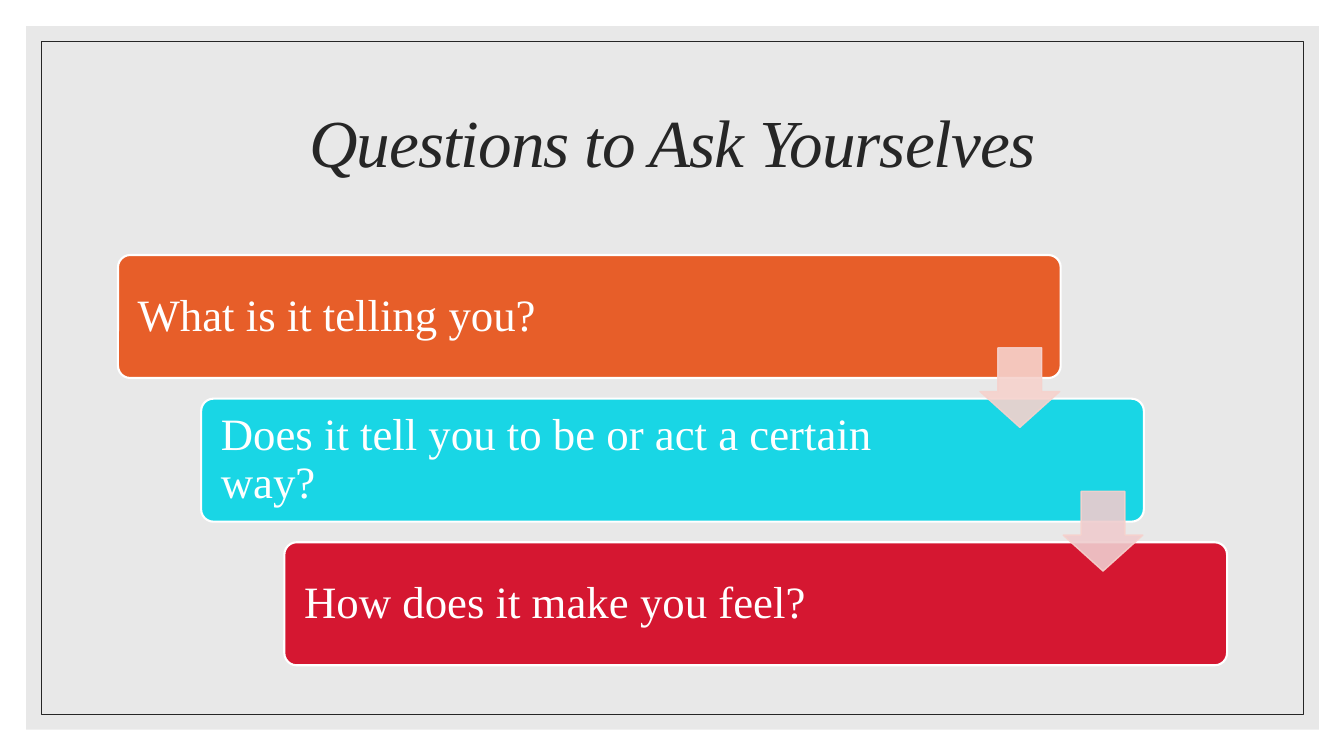
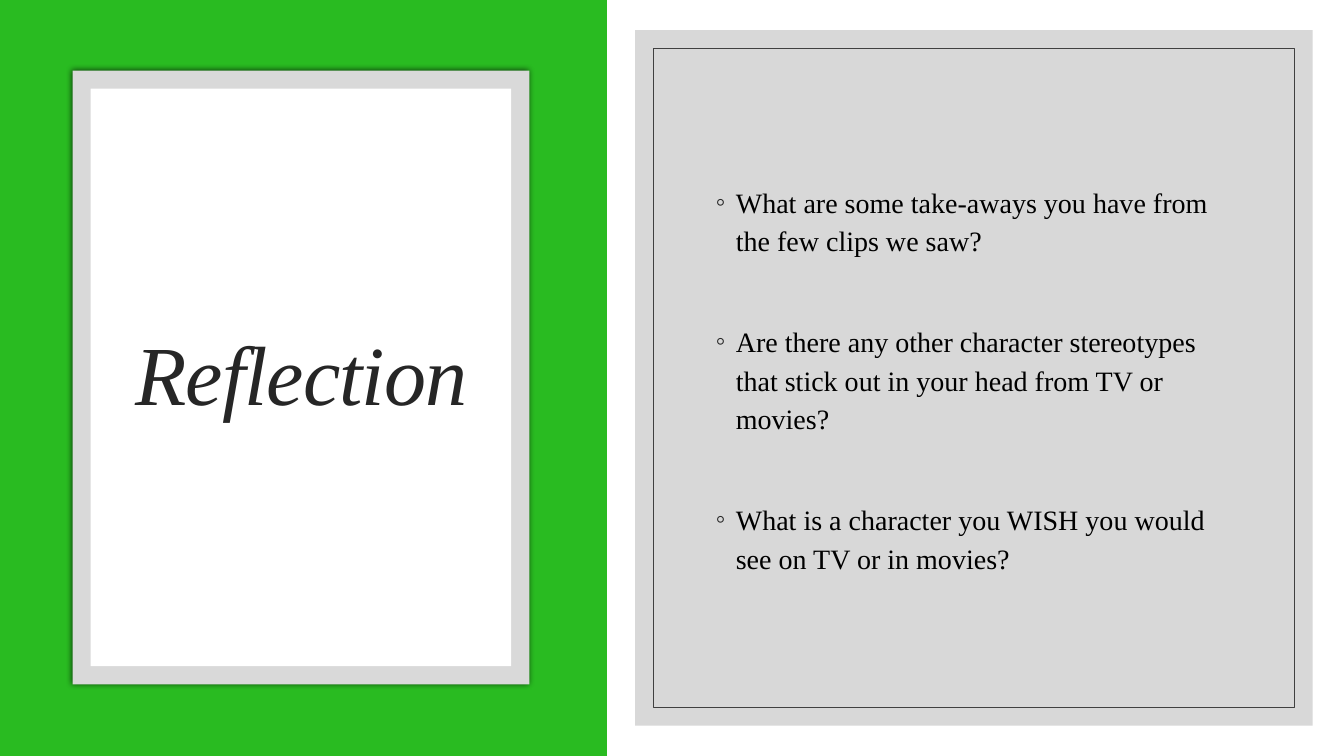
from lxml import etree
from pptx import Presentation
from pptx.dml.color import RGBColor
from pptx.enum import shapes, text
from pptx.oxml import ns
from pptx.util import Inches, Pt

FONT = "Times New Roman"
WHITE, BLACK, INK, GREY = "FFFFFF", "000000", "262626", "D9D9D9"
GREEN = "29BB21"
KIND = shapes.MSO_SHAPE

STEPS = [
    ("What is it telling you?", "E75E29"),
    ("Does it tell you to be or act a certain way?", "19D6E5"),
    ("How does it make you feel?", "D51731"),
]
ARROW_FILLS = ["F6D2CD", "EFCCCE"]
ARROW_LINE = "F6D2CD"
QUESTIONS = [
    "What are some take-aways you have from the few clips we saw?",
    "Are there any other character stereotypes that stick out in your head from TV or movies?",
    "What is a character you WISH you would see on TV or in movies?",
]


def child(parent, tag, **attributes):
    return etree.SubElement(parent, ns.qn(tag), attributes)


def paint(target, color, opacity=100):
    target.solid()
    target.fore_color.rgb = RGBColor.from_string(color)
    if opacity < 100:
        for node in target._xPr.iter(ns.qn("a:solidFill")):
            if node.getparent() is target._xPr:
                child(node[0], "a:alpha", val=str(opacity * 1000))


def add_box(page, kind, place, fill=None, line=None, width=1, opacity=100):
    box = page.shapes.add_shape(kind, *map(Inches, place))
    box.shadow.inherit = False
    if fill:
        paint(box.fill, fill, opacity)
    else:
        box.fill.background()
    if line:
        box.line.width = Pt(width)
        paint(box.line.fill, line, opacity)
    else:
        box.line.fill.background()
    return box


def add_span(para, words, size, color, italic=False):
    span = para.add_run()
    span.text = words
    span.font.name = FONT
    span.font.size = Pt(size)
    span.font.italic = italic
    span.font.color.rgb = RGBColor.from_string(color)
    return span


def add_text_area(page, place):
    frame = page.shapes.add_textbox(*map(Inches, place)).text_frame
    frame.word_wrap = True
    frame.vertical_anchor = text.MSO_ANCHOR.MIDDLE
    return frame


def add_title(page, words, place, size):
    para = add_text_area(page, place).paragraphs[0]
    para.alignment = text.PP_ALIGN.CENTER
    para.line_spacing = 0.9
    span = add_span(para, words, size, INK, italic=True)
    span.font._element.set("spc", "-70")


def add_framed_panel(page, place, fill, line, inset):
    left, top, width, height = place
    add_box(page, KIND.RECTANGLE, place, fill, opacity=60)
    inner = (left + inset, top + inset, width - 2 * inset, height - 2 * inset)
    add_box(page, KIND.RECTANGLE, inner, line=line, width=0.5)


def add_step(page, words, fill, left, top):
    box = add_box(page, KIND.ROUNDED_RECTANGLE, (left, top, 9.35, 1.22), fill, WHITE, 1.5)
    box.adjustments[0] = 0.1
    frame = box.text_frame
    frame.word_wrap = True
    frame.vertical_anchor = text.MSO_ANCHOR.MIDDLE
    frame.margin_left, frame.margin_right = Inches(0.16), Inches(1.79)
    para = frame.paragraphs[0]
    para.alignment = text.PP_ALIGN.LEFT
    para.line_spacing = 0.9
    add_span(para, words, 32, WHITE)


def add_arrow(page, fill, left, top):
    arrow = add_box(page, KIND.DOWN_ARROW, (left, top, 0.79, 0.79), fill, ARROW_LINE, opacity=90)
    arrow.adjustments[0] = 0.55
    arrow.adjustments[1] = 0.45


def add_bullets(page, items, place):
    frame = add_text_area(page, place)
    for index, words in enumerate(items):
        para = frame.add_paragraph() if index else frame.paragraphs[0]
        para.line_spacing = 1.15
        para.space_before = Pt(44.4 if index else 9)
        props = para._p.get_or_add_pPr()
        props.set("marL", str(Inches(0.2)))
        props.set("indent", str(-Inches(0.2)))
        child(child(props, "a:buClr"), "a:srgbClr", val=INK)
        child(props, "a:buFont", typeface=FONT)
        child(props, "a:buChar", char="◦")
        add_span(para, words, 20, BLACK)


def add_soft_shadow(box):
    effects = box._element.spPr.find(ns.qn("a:effectLst"))
    shadow = child(effects, "a:outerShdw", blurRad=str(Pt(4)), dist="0", dir="0")
    child(child(shadow, "a:srgbClr", val=BLACK), "a:alpha", val="66000")


def build_questions(page):
    add_framed_panel(page, (0.26, 0.26, 12.82, 6.98), GREY, INK, 0.15)
    add_title(page, "Questions to Ask Yourselves", (1.17, 0.7, 11, 1.5), 48)
    shift, drop = 0.825, 1.425
    for index, (words, fill) in enumerate(STEPS):
        add_step(page, words, fill, 1.17 + index * shift, 2.53 + index * drop)
    for index, fill in enumerate(ARROW_FILLS):
        add_arrow(page, fill, 9.72 + index * shift, 3.45 + index * drop)


def build_reflection(page):
    add_box(page, KIND.RECTANGLE, (0, 0, 6.02, 7.5), GREEN)
    add_soft_shadow(add_box(page, KIND.RECTANGLE, (0.72, 0.7, 4.53, 6.09), GREY))
    add_box(page, KIND.RECTANGLE, (0.9, 0.88, 4.17, 5.73), WHITE)
    add_title(page, "Reflection", (1.08, 1.3, 3.82, 4.91), 60)
    add_framed_panel(page, (6.3, 0.3, 6.72, 6.9), "BFBFBF", "404040", 0.18)
    add_bullets(page, QUESTIONS, (7, 1.02, 5.33, 5.45))


def main():
    deck = Presentation()
    deck.slide_width, deck.slide_height = Inches(13.33), Inches(7.5)
    for build in (build_questions, build_reflection):
        build(deck.slides.add_slide(deck.slide_layouts[6]))
    deck.save("out.pptx")


if __name__ == "__main__":
    main()
